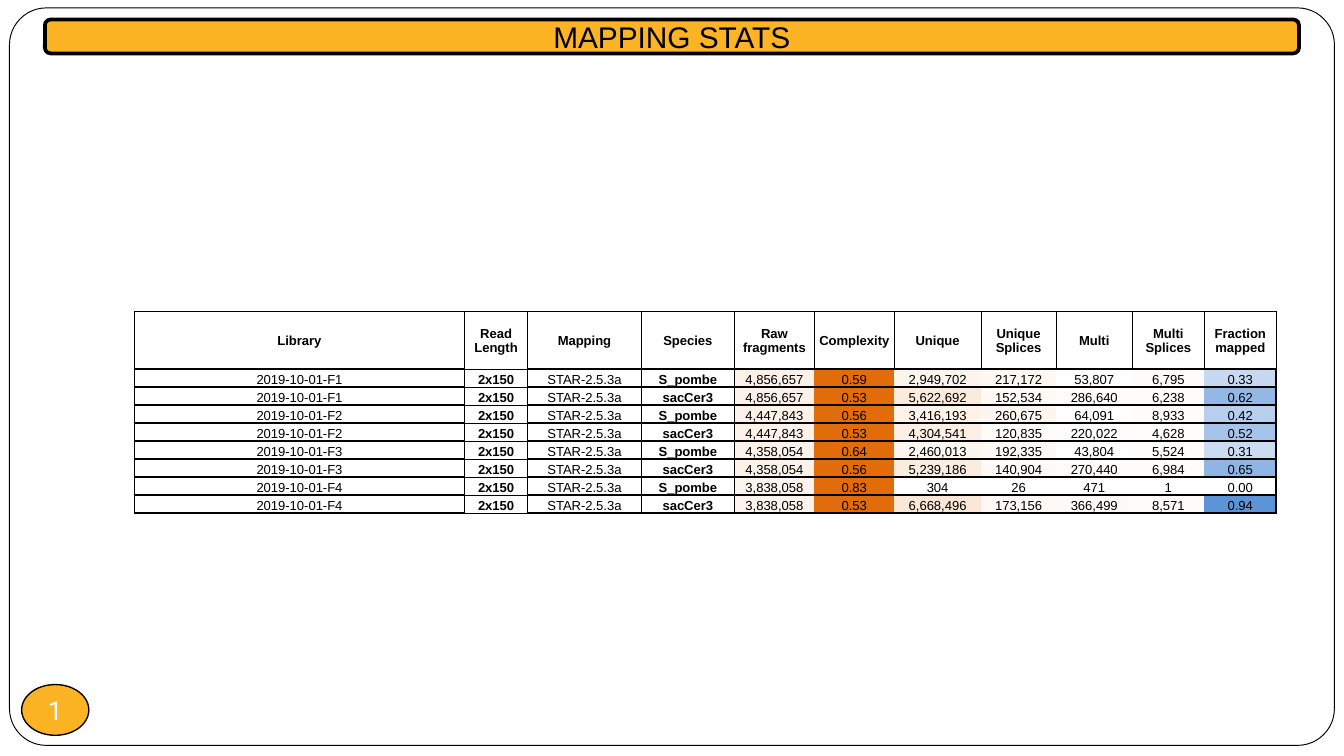
from lxml.etree import SubElement
from pptx import Presentation
from pptx.dml.color import RGBColor
from pptx.enum.shapes import MSO_SHAPE as Shape
from pptx.enum.text import MSO_ANCHOR as Anchor, PP_ALIGN as Align
from pptx.oxml.ns import qn
from pptx.util import Cm, Pt

BLACK, WHITE, AMBER = "000000", "FFFFFF", "FCB424"
ORANGE, BLUE = "E26B0A", "538DD5"
THIN, THICK = 0.5, 1
NO_STYLE = "{2D5ABB26-0587-4C30-8999-92F81FD0307C}"

# Heading, column width in cm, (deepest colour, value that reaches it)
COLUMNS = [
    ("Library", 6.24, None),
    ("Read Length", 1.19, None),
    ("Mapping", 2.15, None),
    ("Species", 1.76, None),
    ("Raw fragments", 1.51, (ORANGE, 51_500_000)),
    ("Complexity", 1.51, (ORANGE, 0.5)),
    ("Unique", 1.64, (ORANGE, 41_000_000)),
    ("Unique Splices", 1.42, (ORANGE, 4_200_000)),
    ("Multi", 1.44, (ORANGE, 10_800_000)),
    ("Multi Splices", 1.36, (ORANGE, 333_000)),
    ("Fraction mapped", 1.36, (BLUE, 1)),
]
READ_LENGTH, MAPPING, SPECIES, LAST = 1, 2, 3, len(COLUMNS) - 1

# Each library is mapped to both species
LIBRARIES = {
    "2019-10-01-F1": ("4,856,657", [
        ("0.59", "2,949,702", "217,172", "53,807", "6,795", "0.33"),
        ("0.53", "5,622,692", "152,534", "286,640", "6,238", "0.62")]),
    "2019-10-01-F2": ("4,447,843", [
        ("0.56", "3,416,193", "260,675", "64,091", "8,933", "0.42"),
        ("0.53", "4,304,541", "120,835", "220,022", "4,628", "0.52")]),
    "2019-10-01-F3": ("4,358,054", [
        ("0.64", "2,460,013", "192,335", "43,804", "5,524", "0.31"),
        ("0.56", "5,239,186", "140,904", "270,440", "6,984", "0.65")]),
    "2019-10-01-F4": ("3,838,058", [
        ("0.83", "304", "26", "471", "1", "0.00"),
        ("0.53", "6,668,496", "173,156", "366,499", "8,571", "0.94")]),
}


def rgb(code):
    return RGBColor.from_string(code)


def heat(text, deepest, top):
    """Blend white towards the deepest colour in step with the value."""
    share = min(float(text.replace(",", "")) / top, 1)
    return "".join(f"{round(255 + (part - 255) * share):02X}" for part in rgb(deepest))


def borders(row, col):
    """Widths of the left, right, top and bottom borders of a cell."""
    if col == READ_LENGTH:
        return dict(L=THIN, R=THIN, T=THIN, B=THIN)
    if row == 0:
        return dict(L=THIN, R=THIN, T=THIN, B=THICK)
    sides = {}
    if col <= SPECIES:
        sides["L"] = THIN if col else THICK
    if col <= MAPPING:
        sides["R"] = THIN
    if col == LAST:
        sides["R"] = THICK
    sides["T" if row % 2 else "B"] = THICK
    return sides


class Deck:
    font = "Arial"
    cell_size = 7

    def __init__(self, width, height):
        self.file = Presentation()
        self.file.slide_width, self.file.slide_height = Cm(width), Cm(height)
        self.slide = self.file.slides.add_slide(self.file.slide_layouts[6])

    def label(self, frame, text, size, color=BLACK, font=None, bold=False):
        paragraph = frame.paragraphs[0]
        paragraph.alignment = Align.CENTER
        run = paragraph.add_run()
        run.text = text
        run.font.name, run.font.size, run.font.bold = font or self.font, Pt(size), bold
        run.font.color.rgb = rgb(color)

    def panel(self, kind, box, fill, line, corner=None):
        shape = self.slide.shapes.add_shape(kind, *map(Cm, box))
        shape.shadow.inherit = False
        shape.fill.solid()
        shape.fill.fore_color.rgb = rgb(fill)
        shape.line.color.rgb, shape.line.width = rgb(BLACK), Pt(line)
        if corner is not None:
            shape.adjustments[0] = corner
        frame = shape.text_frame
        frame.vertical_anchor = Anchor.MIDDLE
        frame.margin_left = frame.margin_right = frame.margin_top = frame.margin_bottom = 0
        return frame

    def border(self, cell, sides):
        properties = cell._tc.get_or_add_tcPr()
        for side in "LRTB":
            if side in sides:
                line = SubElement(properties, qn(f"a:ln{side}"), w=str(Pt(sides[side])))
                fill = SubElement(line, qn("a:solidFill"))
                SubElement(fill, qn("a:srgbClr"), val=BLACK)

    def table(self, left, top, header_height, row_height, columns, rows):
        heights = [header_height] + [row_height] * (len(rows) - 1)
        widths = [width for _, width, _ in columns]
        table = self.slide.shapes.add_table(
            len(rows), len(columns), Cm(left), Cm(top), Cm(sum(widths)), Cm(sum(heights))).table
        table.first_row = table.horz_banding = False
        table._tbl.tblPr.find(qn("a:tableStyleId")).text = NO_STYLE
        for column, width in zip(table.columns, widths):
            column.width = Cm(width)
        for row, height in zip(table.rows, heights):
            row.height = Cm(height)
        for r, values in enumerate(rows):
            for c, value in enumerate(values):
                self.cell(table.cell(r, c), r, c, value, columns[c][2])

    def cell(self, cell, row, col, text, scale):
        cell.margin_left = cell.margin_right = cell.margin_top = Cm(0.02)
        cell.margin_bottom = 0
        cell.vertical_anchor = Anchor.BOTTOM if row else Anchor.MIDDLE
        self.border(cell, borders(row, col))
        if row and scale:
            cell.fill.solid()
            cell.fill.fore_color.rgb = rgb(heat(text, *scale))
        else:
            cell.fill.background()
        bold = row == 0 or col in (READ_LENGTH, SPECIES)
        self.label(cell.text_frame, text, self.cell_size, bold=bold)


def main():
    deck = Deck(25.4, 14.29)

    # Frame and page number
    deck.panel(Shape.ROUNDED_RECTANGLE, (0.18, 0.15, 25.04, 13.94), WHITE, 0.5, 0.05)
    page = deck.panel(Shape.OVAL, (0.41, 12.94, 1.27, 0.96), AMBER, 0.75)
    page.word_wrap = False
    deck.label(page, "1", 14, WHITE, "Roboto")

    # Title bar
    title = deck.panel(Shape.ROUNDED_RECTANGLE, (0.85, 0.37, 23.7, 0.64), AMBER, 2)
    deck.label(title, "MAPPING STATS", 16)

    # Mapping table
    rows = [[heading for heading, _, _ in COLUMNS]]
    for library, (fragments, counts) in LIBRARIES.items():
        for species, values in zip(("S_pombe", "sacCer3"), counts):
            rows.append([library, "2x150", "STAR-2.5.3a", species, fragments, *values])
    deck.table(2.54, 5.89, 1.09, 0.34, COLUMNS, rows)

    deck.file.save("out.pptx")


if __name__ == "__main__":
    main()
